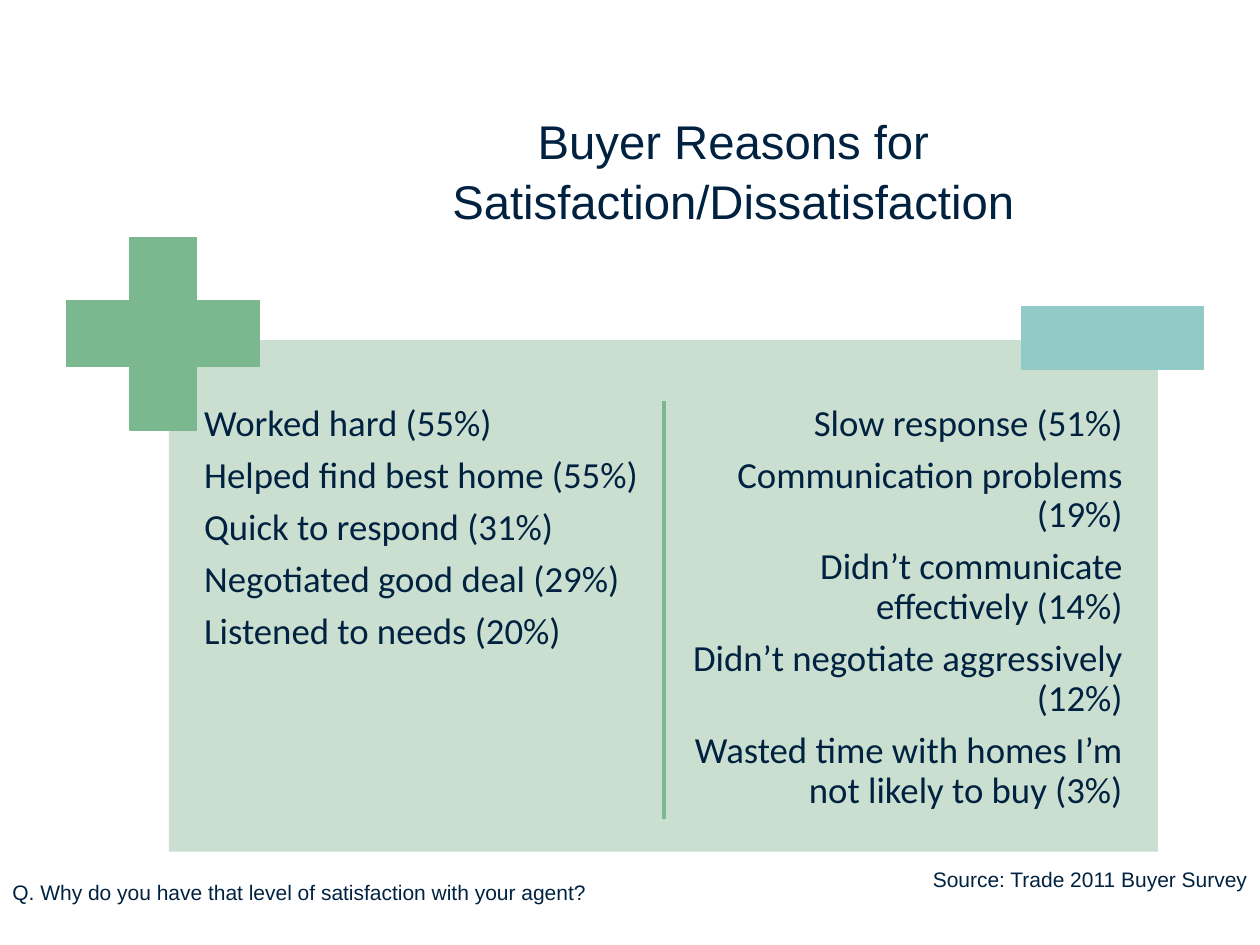
from pptx import Presentation
from pptx.dml.color import RGBColor
from pptx.enum.shapes import MSO_CONNECTOR as Connector, MSO_SHAPE as Shape
from pptx.enum.text import PP_ALIGN as Align
from pptx.oxml.ns import qn
from pptx.util import Pt
from lxml.etree import SubElement

NAVY = RGBColor(0x00, 0x22, 0x40)
PALE_GREEN = RGBColor(0xCB, 0xDF, 0xD1)
GREEN = RGBColor(0x7B, 0xB8, 0x8F)
TEAL = RGBColor(0x92, 0xCA, 0xC8)

SATISFIED = [
    "Worked hard (55%)",
    "Helped find best home (55%)",
    "Quick to respond (31%)",
    "Negotiated good deal (29%)",
    "Listened to needs (20%)",
]
DISSATISFIED = [
    "Slow response (51%)",
    "Communication problems (19%)",
    "Didn’t communicate effectively (14%)",
    "Didn’t negotiate aggressively (12%)",
    "Wasted time with homes I’m not likely to buy (3%)",
]


class SlideBuilder:
    """Holds the text style and the slide that elements are added to."""

    def __init__(self, slide, color=NAVY, heading_font="Arial", body_font="Calibri"):
        self.slide = slide
        self.color = color
        self.heading_font = heading_font
        self.body_font = body_font

    def block(self, kind, left, top, width, height, fill, outlined=True):
        shape = self.slide.shapes.add_shape(
            kind, Pt(left), Pt(top), Pt(width), Pt(height))
        shape.shadow.inherit = False
        shape.fill.solid()
        shape.fill.fore_color.rgb = fill
        if outlined:
            shape.line.color.rgb = fill
            shape.line.width = Pt(0.75)
        else:
            shape.line.fill.background()
        return shape

    def text(self, lines, left, top, width, height, size, font=None,
             align=Align.LEFT, inset=None, spacing=1.0, after=0):
        box = self.slide.shapes.add_textbox(
            Pt(left), Pt(top), Pt(width), Pt(height))
        frame = box.text_frame
        frame.word_wrap = True
        if inset is not None:
            frame.margin_left = frame.margin_right = Pt(inset)
            frame.margin_top = frame.margin_bottom = Pt(inset)
        frame.text = "\n".join(lines)
        for paragraph in frame.paragraphs:
            paragraph.alignment = align
            paragraph.line_spacing = spacing
            paragraph.space_after = Pt(after)
            for run in paragraph.runs:
                run.font.name = font or self.heading_font
                run.font.size = Pt(size)
                run.font.color.rgb = self.color

    def reasons(self, lines, left, align):
        self.text(lines, left, 228.2, 262.8, 249.8, 21, self.body_font,
                  align, inset=2.9, spacing=0.9, after=7.1)

    def divider(self, x, top, bottom, color):
        line = self.slide.shapes.add_connector(
            Connector.STRAIGHT, Pt(x), Pt(top), Pt(x), Pt(bottom))
        line.line.color.rgb = color
        line.line.width = Pt(2)
        SubElement(line._element.spPr, qn("a:effectLst"))


def main():
    presentation = Presentation()
    presentation.slide_width = Pt(720)
    presentation.slide_height = Pt(540)
    slide = presentation.slides.add_slide(presentation.slide_layouts[6])
    builder = SlideBuilder(slide)

    builder.text(["Buyer Reasons for Satisfaction/Dissatisfaction"],
                 143.3, 59, 551.5, 54.7, 27, align=Align.CENTER, spacing=1.05)

    builder.block(Shape.RECTANGLE, 96.5, 194.4, 565.2, 292.3, PALE_GREEN, outlined=False)
    builder.reasons(SATISFIED, 113.8, Align.LEFT)
    builder.reasons(DISSATISFIED, 381.6, Align.RIGHT)
    plus = builder.block(Shape.CROSS, 38.1, 135.6, 110.2, 110.2, GREEN)
    plus.adjustments[0] = 0.328
    builder.block(Shape.RECTANGLE, 583.9, 175.4, 104, 35.6, TEAL)
    builder.divider(379.4, 229, 468, GREEN)

    builder.text(["Q. Why do you have that level of satisfaction with your agent?"],
                 0, 499, 522, 21.6, 12)
    builder.text(["Source: Trade 2011 Buyer Survey"],
                 424.8, 491.8, 295.2, 21.6, 12, align=Align.RIGHT)

    presentation.save("out.pptx")


if __name__ == "__main__":
    main()
